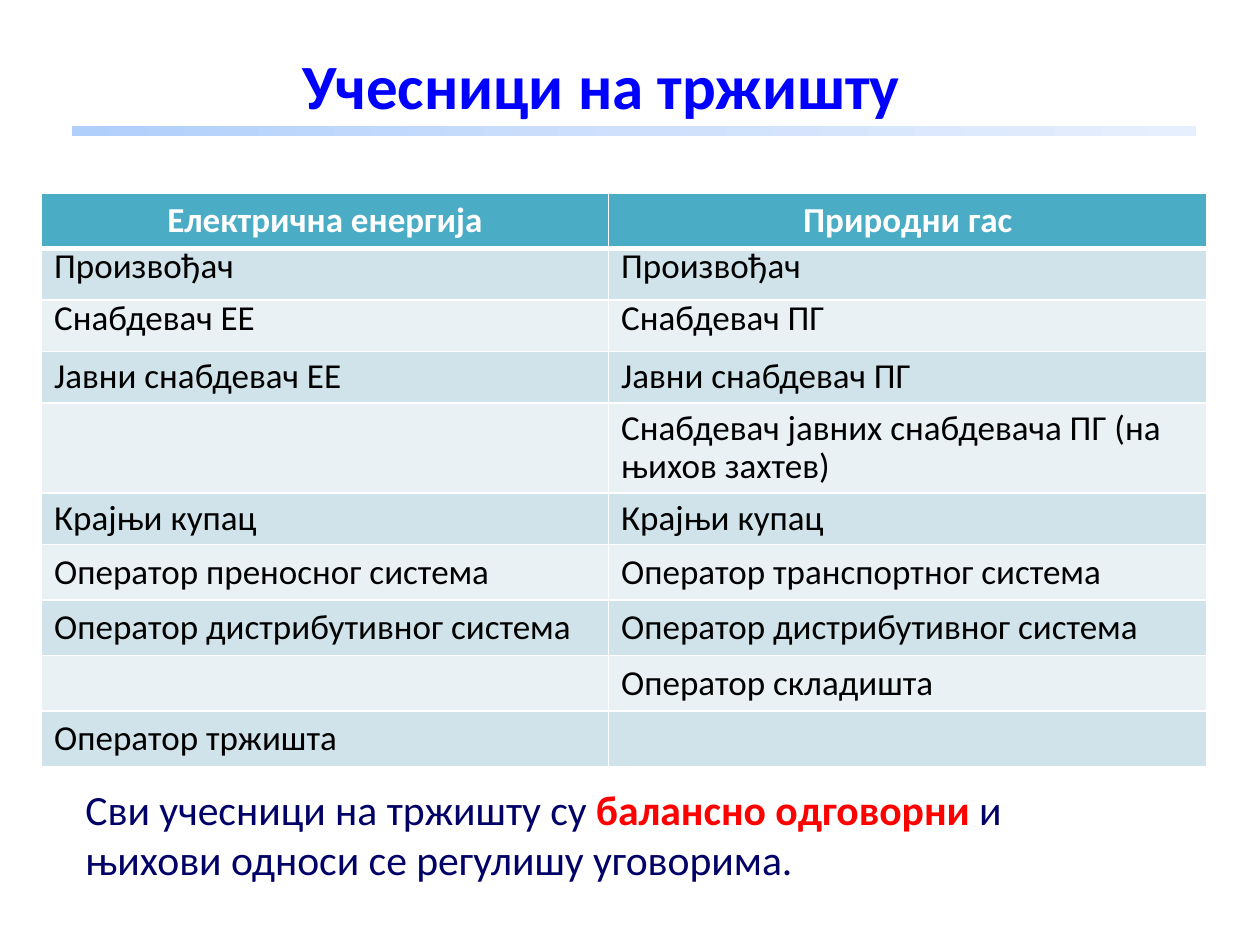
from copy import deepcopy
from typing import NamedTuple

from lxml.etree import SubElement
from pptx import Presentation
from pptx.dml.color import RGBColor
from pptx.enum.shapes import MSO_SHAPE
from pptx.enum.text import MSO_ANCHOR, MSO_AUTO_SIZE, PP_ALIGN
from pptx.oxml.ns import qn
from pptx.util import Inches, Pt

WIDE, HIGH = 10, 7.5
FONT = "Calibri"
HUES = {
    "title": "0000FF", "head": "4BACC6", "odd": "D0E3EA", "even": "E9F1F5",
    "white": "FFFFFF", "black": "000000", "navy": "000066", "red": "FF0000",
    "deep": "B0CFFB", "mid": "CEE0FC", "pale": "E6EFFD",
}


class Box(NamedTuple):
    x: float
    y: float
    w: float
    h: float

    def place(self) -> list:
        sides = (WIDE, HIGH, WIDE, HIGH)
        return [Inches(part * side) for part, side in zip(self, sides)]


class Style(NamedTuple):
    size: float
    hue: str
    bold: bool = False


class Row(NamedTuple):
    left: str
    right: str
    space: float = 1.0


TITLE = Box(0.052, 0.023, 0.85, 0.133)
BAR = Box(0.057, 0.133, 0.892, 0.011)
GRID = Box(0.033, 0.204, 0.925, 0.547)
NOTE = Box(0.058, 0.823, 0.775, 0.144)
COLS = (0.45, 0.475)
STEP = 0.41

HEAD = Row("Електрична енергија", "Природни гас")
ROWS = [
    Row("Произвођач", "Произвођач", 0.7),
    Row("Снабдевач ЕЕ", "Снабдевач ПГ", 0.7),
    Row("Јавни снабдевач ЕЕ", "Јавни снабдевач ПГ", 0.9),
    Row("", "Снабдевач јавних снабдевача ПГ (на њихов захтев)", 0.9),
    Row("Крајњи купац", "Крајњи купац", 0.9),
    Row("Оператор преносног система", "Оператор транспортног система"),
    Row("Оператор дистрибутивног система", "Оператор дистрибутивног система"),
    Row("", "Оператор складишта"),
    Row("Оператор тржишта", ""),
]
PARTS = [
    ("Сви учесници на тржишту су ", Style(23.8, "navy")),
    ("балансно одговорни ", Style(23.8, "red", True)),
    ("и њихови односи се регулишу уговорима.", Style(23.8, "navy")),
]


def tint(name: str) -> RGBColor:
    return RGBColor.from_string(HUES[name])


def add_run(para, text: str, style: Style) -> None:
    run = para.add_run()
    run.text = text
    font = run.font
    font.name, font.size, font.bold = FONT, Pt(style.size), style.bold
    font.color.rgb = tint(style.hue)


def add_edges(cell, base: float) -> None:
    props = cell._tc.get_or_add_tcPr()
    for side, width in (("L", 1), ("R", 1), ("T", 1), ("B", base)):
        line = SubElement(props, qn(f"a:ln{side}"), w=str(Pt(width)))
        fill = SubElement(line, qn("a:solidFill"))
        SubElement(fill, qn("a:srgbClr"), val=HUES["white"])


def draw_title(slide) -> None:
    title = slide.shapes.title
    title.left, title.top, title.width, title.height = TITLE.place()
    frame = title.text_frame
    frame.vertical_anchor = MSO_ANCHOR.MIDDLE
    frame.auto_size = MSO_AUTO_SIZE.NONE
    para = frame.paragraphs[0]
    para.alignment = PP_ALIGN.CENTER
    add_run(para, "Учесници на тржишту", Style(36, "title", True))


def draw_bar(slide) -> None:
    bar = slide.shapes.add_shape(MSO_SHAPE.RECTANGLE, *BAR.place())
    bar.shadow.inherit = False
    bar.line.fill.background()
    bar.fill.gradient()
    bar.fill.gradient_angle = 0
    stops = bar._element.spPr.find(qn("a:gradFill")).find(qn("a:gsLst"))
    stops.insert(1, deepcopy(stops[0]))
    for stop, name, share in zip(bar.fill.gradient_stops, ("deep", "mid", "pale"), (0, 0.5, 1)):
        stop.color.rgb = tint(name)
        stop.position = share


def draw_row(table, index: int, row: Row) -> None:
    top = index == 0
    back = "head" if top else ("odd" if index % 2 else "even")
    style = Style(20, "white", True) if top else Style(20, "black")
    table.rows[index].height = Inches(STEP)
    for col, text in enumerate((row.left, row.right)):
        cell = table.cell(index, col)
        add_edges(cell, 3 if top else 1)
        cell.fill.solid()
        cell.fill.fore_color.rgb = tint(back)
        para = cell.text_frame.paragraphs[0]
        para.alignment = PP_ALIGN.CENTER if top else PP_ALIGN.LEFT
        para.line_spacing = row.space
        if text:
            add_run(para, text, style)


def draw_table(slide) -> None:
    rows = [HEAD, *ROWS]
    table = slide.shapes.add_table(len(rows), len(COLS), *GRID.place()).table
    for col, share in zip(table.columns, COLS):
        col.width = Inches(share * WIDE)
    for index, row in enumerate(rows):
        draw_row(table, index, row)


def draw_note(slide) -> None:
    frame = slide.shapes.add_textbox(*NOTE.place()).text_frame
    frame.word_wrap = True
    para = frame.paragraphs[0]
    para.space_before = Pt(4.8)
    for text, style in PARTS:
        add_run(para, text, style)


def main() -> None:
    deck = Presentation()
    deck.slide_width, deck.slide_height = Inches(WIDE), Inches(HIGH)
    slide = deck.slides.add_slide(deck.slide_layouts[5])
    for draw in (draw_title, draw_bar, draw_table, draw_note):
        draw(slide)
    deck.save("out.pptx")


if __name__ == "__main__":
    main()
